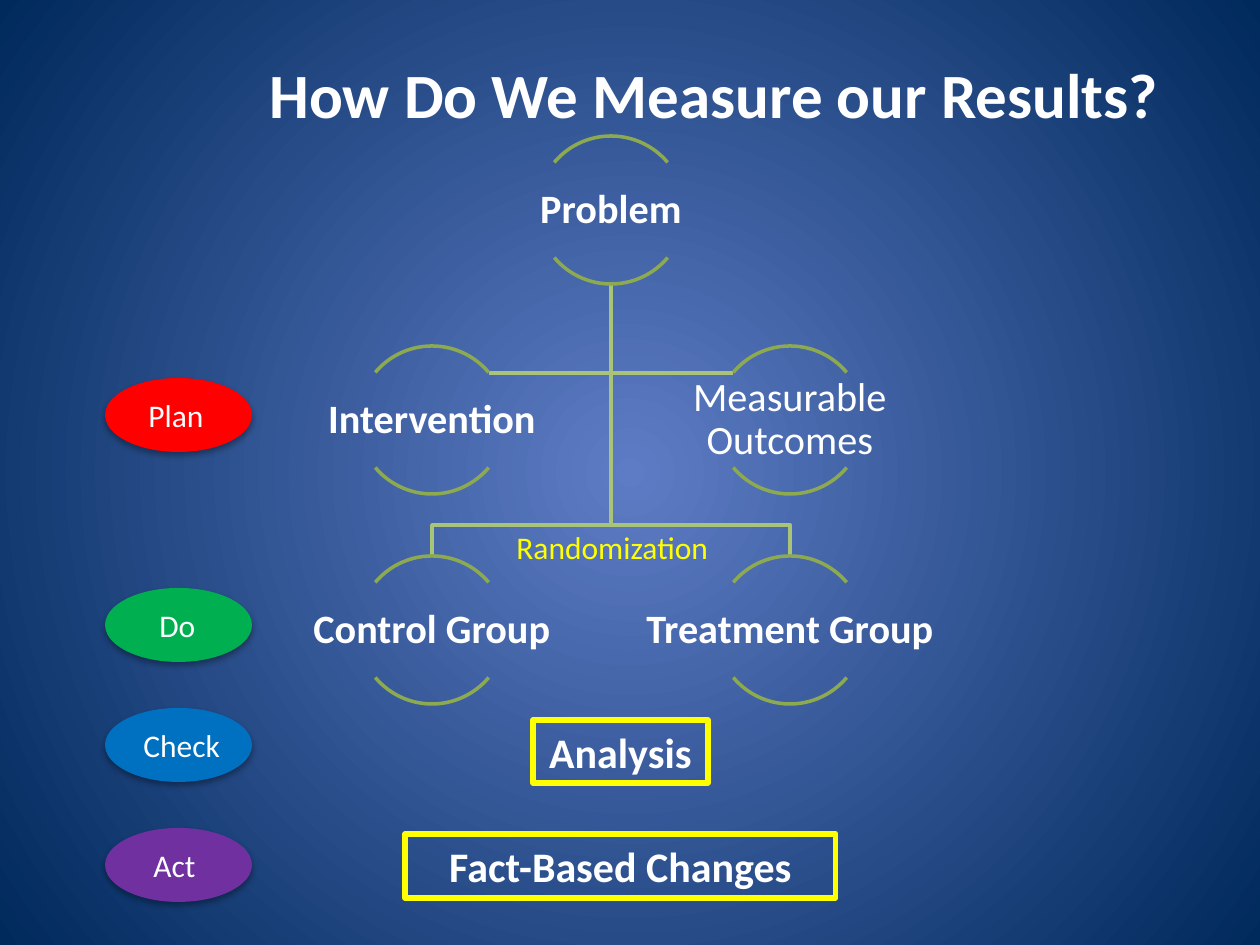
from dataclasses import dataclass

from lxml import etree
from pptx import Presentation
from pptx.dml.color import RGBColor
from pptx.enum.shapes import MSO_SHAPE as Shape
from pptx.enum.text import MSO_ANCHOR as Anchor, PP_ALIGN as Align
from pptx.oxml import parse_xml
from pptx.oxml.ns import nsdecls, qn
from pptx.util import Emu, Pt

EMU_PER_PX = 914400 / 126


@dataclass(frozen=True)
class Theme:
    font: str = "Calibri"
    background_center: str = "5E7CC5"
    background_edge: str = "00295C"
    white: str = "FFFFFF"
    yellow: str = "FFFF00"
    arc: str = "8DAA51"
    branch: str = "A9C379"
    plan: str = "FF0000"
    do: str = "00B050"
    check: str = "0070C0"
    act: str = "7030A0"
    title_size: int = 36
    box_size: int = 24
    node_size: int = 23
    label_size: int = 18


THEME = Theme()
NODE_SIZE = 148
COLUMNS = [432 + 179 * column for column in range(3)]
ROWS = [136 + 210 * row for row in range(3)]


def px(length):
    return Emu(round(length * EMU_PER_PX))


def color(value):
    return RGBColor.from_string(value)


def set_background(slide):
    fill = slide.background.fill
    fill.gradient()
    colors = (THEME.background_center, THEME.background_edge)
    for stop, position, value in zip(fill.gradient_stops, (0, 1), colors):
        stop.position = position
        stop.color.rgb = color(value)
    gradient = slide.element.find(".//" + qn("a:gradFill"))
    circle = parse_xml(
        f'<a:path {nsdecls("a")} path="circle">'
        '<a:fillToRect l="50000" t="50000" r="50000" b="50000"/></a:path>'
    )
    gradient.replace(gradient.find(qn("a:lin")), circle)


def write(shape, text, size, text_color=THEME.white, bold=False, align=Align.LEFT, anchor=Anchor.TOP):
    frame = shape.text_frame
    frame.word_wrap = True
    frame.vertical_anchor = anchor
    paragraph = frame.paragraphs[0]
    paragraph.text = text
    paragraph.alignment = align
    font = paragraph.font
    font.name, font.size, font.bold = THEME.font, Pt(size), bold
    font.color.rgb = color(text_color)
    return frame


def add_text(slide, box, text, size, **style):
    return write(slide.shapes.add_textbox(*map(px, box)), text, size, **style)


def set_outline(shape, line_color, width):
    shape.shadow.inherit = False
    shape.fill.background()
    shape.line.color.rgb = color(line_color)
    shape.line.width = Pt(width)


def add_branch(slide, points):
    builder = slide.shapes.build_freeform(*points[0], scale=EMU_PER_PX)
    builder.add_line_segments(points[1:], close=False)
    set_outline(builder.convert_to_shape(), THEME.branch, 2)


def add_node(slide, center, top, text, bold=True):
    for angles in ((132, 192), (24, 84)):
        box = (center - NODE_SIZE / 2, top, NODE_SIZE, NODE_SIZE)
        arc = slide.shapes.add_shape(Shape.ARC, *map(px, box))
        arc.adjustments[0], arc.adjustments[1] = angles
        set_outline(arc, THEME.arc, 2)
    frame = add_text(slide, (center - 147, top + 27, 294, 94), text, THEME.node_size,
                     bold=bold, align=Align.CENTER, anchor=Anchor.MIDDLE)
    frame.margin_left = frame.margin_right = frame.margin_top = frame.margin_bottom = px(2)
    frame.paragraphs[0].line_spacing = 0.9


def add_framed_text(slide, box, text):
    shape = slide.shapes.add_shape(Shape.RECTANGLE, *map(px, box))
    set_outline(shape, THEME.yellow, 3)
    write(shape, text, THEME.box_size, bold=True, align=Align.CENTER)


def add_soft_shadow(shape):
    shape.shadow.inherit = False
    effects = shape.element.spPr.find(qn("a:effectLst"))
    shadow = etree.SubElement(effects, qn("a:outerShdw"), blurRad=str(Pt(3.5)),
                              dist=str(Pt(2.2)), dir="5400000", rotWithShape="0")
    shade = etree.SubElement(shadow, qn("a:srgbClr"), val="000000")
    etree.SubElement(shade, qn("a:alpha"), val="32000")


def add_stage(slide, top, text, fill_color, label_left, label_width):
    ellipse = slide.shapes.add_shape(Shape.OVAL, *map(px, (105, top, 147, 74)))
    ellipse.fill.solid()
    ellipse.fill.fore_color.rgb = color(fill_color)
    ellipse.line.fill.background()
    add_soft_shadow(ellipse)
    add_text(slide, (label_left, top + 12, label_width, 50), text, THEME.label_size)


def main():
    presentation = Presentation()
    presentation.slide_width, presentation.slide_height = px(1260), px(945)
    slide = presentation.slides.add_slide(presentation.slide_layouts[6])
    set_background(slide)
    add_text(slide, (231, 38, 966, 110), "How Do We Measure our Results?", THEME.title_size,
             bold=True, align=Align.CENTER, anchor=Anchor.MIDDLE)

    left, middle, right = COLUMNS
    problem_row, plan_row, group_row = ROWS
    trunk = (middle, problem_row + NODE_SIZE)
    for end in (right - 57, left + 57):
        add_branch(slide, [trunk, (middle, 373), (end, 373)])
    for end in (right, left):
        add_branch(slide, [trunk, (middle, 525), (end, 525), (end, group_row)])

    add_node(slide, middle, problem_row, "Problem")
    add_node(slide, left, group_row, "Control Group")
    add_node(slide, right, group_row, "Treatment Group")
    add_node(slide, left, plan_row, "Intervention")
    add_node(slide, right, plan_row, "Measurable Outcomes", bold=False)

    add_text(slide, (504, 522, 231, 50), "Randomization", THEME.label_size, text_color=THEME.yellow)
    add_framed_text(slide, (533, 720, 175, 63), "Analysis")
    add_framed_text(slide, (405, 834, 431, 64), "Fact-Based Changes")

    stages = [
        (378, "Plan", THEME.plan, 136, 84),
        (588, "Do", THEME.do, 147, 73),
        (708, "Check", THEME.check, 131, 105),
        (828, "Act", THEME.act, 141, 84),
    ]
    for stage in stages:
        add_stage(slide, *stage)
    presentation.save("out.pptx")


if __name__ == "__main__":
    main()
